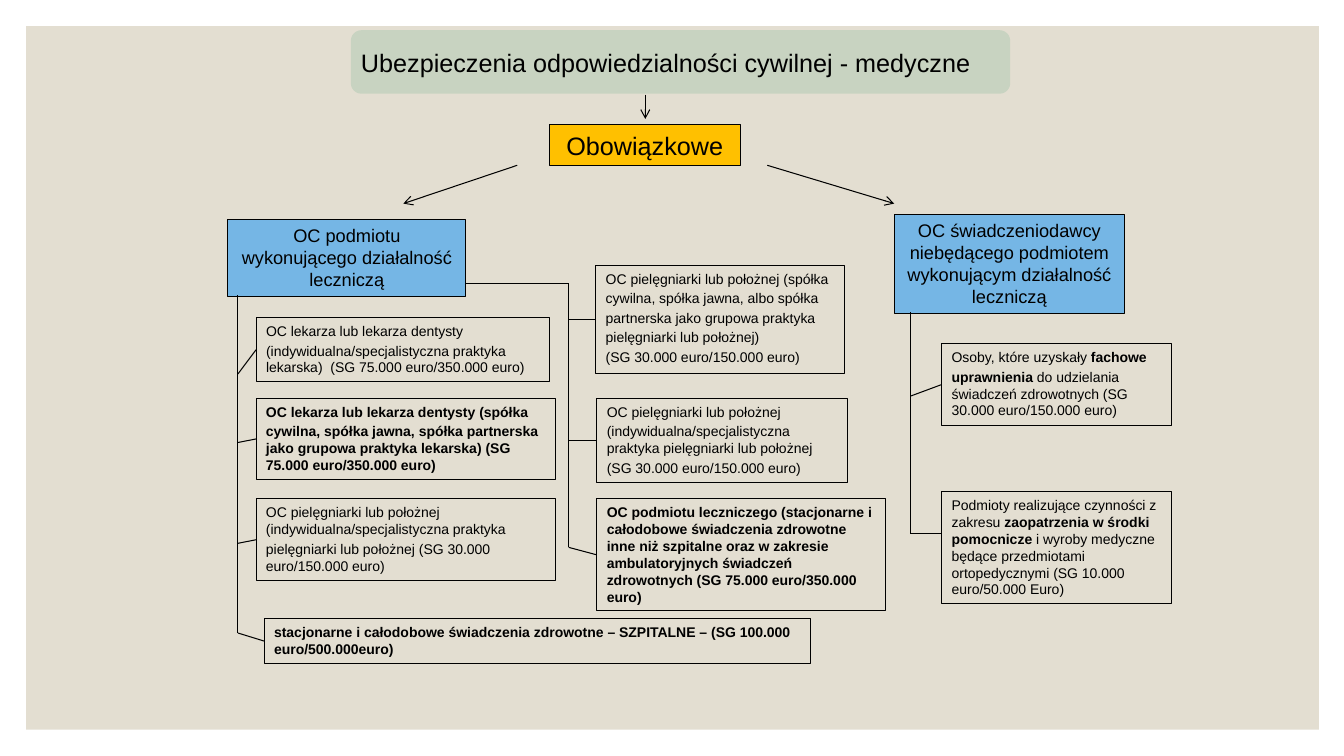
from dataclasses import dataclass

from lxml import etree
from pptx import Presentation
from pptx.dml.color import RGBColor
from pptx.enum.shapes import MSO_CONNECTOR, MSO_SHAPE
from pptx.enum.text import MSO_ANCHOR, MSO_AUTO_SIZE, PP_ALIGN
from pptx.oxml.ns import qn
from pptx.shapes.autoshape import Shape
from pptx.shapes.connector import Connector
from pptx.slide import Slide
from pptx.text.text import TextFrame
from pptx.util import Inches, Pt

RECTANGLE = MSO_SHAPE.RECTANGLE
ROUNDED = MSO_SHAPE.ROUNDED_RECTANGLE
STRAIGHT = MSO_CONNECTOR.STRAIGHT
LEFT, CENTER = PP_ALIGN.LEFT, PP_ALIGN.CENTER
TOP, MIDDLE = MSO_ANCHOR.TOP, MSO_ANCHOR.MIDDLE
NO_AUTOFIT = MSO_AUTO_SIZE.NONE
LEFT_SIDE = 1


@dataclass(frozen=True)
class Theme:
    font: str = "Arial"
    ink: str = "000000"
    panel: str = "E3DED1"
    plaque: str = "339966"
    plaque_alpha: int = 15
    root: str = "FFC000"
    branch: str = "75B6E5"
    title_size: int = 18
    branch_size: int = 13
    leaf_size: int = 10
    line_width: float = 0.75
    space_ratio: float = 0.2


THEME = Theme()


@dataclass(frozen=True)
class Area:
    left: float
    top: float
    width: float
    height: float

    def lengths(self) -> tuple:
        return tuple(Inches(v) for v in (self.left, self.top, self.width, self.height))


@dataclass(frozen=True)
class Header:
    area: Area
    fill: str
    size: int
    text: str


@dataclass(frozen=True)
class Leaf:
    """A box on a trunk; ** switches bold on and off in its paragraphs."""
    area: Area
    trunk_x: float
    joint_y: float
    paragraphs: tuple[str, ...]
    level_joint: bool = False


@dataclass(frozen=True)
class Segment:
    start: tuple[float, float]
    end: tuple[float, float]
    arrow: bool = False


TITLE = "Ubezpieczenia odpowiedzialności cywilnej - medyczne"
PANEL_AREA = Area(0.26, 0.26, 12.82, 6.98)
TITLE_AREA = Area(3.48, 0.3, 6.54, 0.63)

HEADERS = (
    Header(Area(5.45, 1.24, 1.89, 0.4), THEME.root, THEME.title_size, "Obowiązkowe"),
    Header(Area(2.26, 2.18, 2.36, 0.76), THEME.branch, THEME.branch_size,
           "OC podmiotu wykonującego działalność leczniczą"),
    Header(Area(8.87, 2.13, 2.28, 0.98), THEME.branch, THEME.branch_size,
           "OC świadczeniodawcy niebędącego podmiotem wykonującym działalność leczniczą"),
)

TRUNK_LEFT, TRUNK_MIDDLE, TRUNK_RIGHT = 2.36, 5.64, 9.03

LEAVES = (
    Leaf(Area(2.54, 3.15, 2.91, 0.64), TRUNK_LEFT, 3.71, (
        "OC lekarza lub lekarza dentysty",
        "(indywidualna/specjalistyczna praktyka lekarska)  (SG 75.000 euro/350.000 euro)")),
    Leaf(Area(2.54, 3.95, 2.97, 0.81), TRUNK_LEFT, 4.39, (
        "**OC lekarza lub lekarza dentysty (spółka**",
        "**cywilna, spółka jawna, spółka partnerska jako grupowa praktyka lekarska) "
        "(SG 75.000 euro/350.000 euro)**")),
    Leaf(Area(2.54, 4.95, 2.97, 0.81), TRUNK_LEFT, 5.39, (
        "OC pielęgniarki lub położnej (indywidualna/specjalistyczna praktyka",
        "pielęgniarki lub położnej (SG 30.000 euro/150.000 euro)")),
    Leaf(Area(2.62, 6.14, 5.42, 0.44), TRUNK_LEFT, 6.28, (
        "**stacjonarne i całodobowe świadczenia zdrowotne – SZPITALNE – "
        "(SG 100.000 euro/500.000euro)**",)),
    Leaf(Area(5.91, 2.63, 2.47, 1.08), TRUNK_MIDDLE, 3.17, (
        "OC pielęgniarki lub położnej (spółka",
        "cywilna, spółka jawna, albo spółka",
        "partnerska jako grupowa praktyka",
        "pielęgniarki lub położnej)",
        "(SG 30.000 euro/150.000 euro)")),
    Leaf(Area(5.92, 3.95, 2.49, 0.84), TRUNK_MIDDLE, 4.37, (
        "OC pielęgniarki lub położnej",
        "(indywidualna/specjalistyczna praktyka pielęgniarki lub położnej",
        "(SG 30.000 euro/150.000 euro)")),
    Leaf(Area(5.92, 4.95, 2.86, 1.11), TRUNK_MIDDLE, 5.43, (
        "**OC podmiotu leczniczego (stacjonarne i całodobowe świadczenia zdrowotne inne niż "
        "szpitalne oraz w zakresie ambulatoryjnych świadczeń zdrowotnych "
        "(SG 75.000 euro/350.000 euro)**",)),
    Leaf(Area(9.34, 3.41, 2.28, 0.81), TRUNK_RIGHT, 3.93, (
        "Osoby, które uzyskały **fachowe**",
        "**uprawnienia **do udzielania świadczeń zdrowotnych (SG 30.000 euro/150.000 euro)")),
    Leaf(Area(9.34, 4.88, 2.28, 1.11), TRUNK_RIGHT, 5.29, (
        "Podmioty realizujące czynności z zakresu **zaopatrzenia w środki pomocnicze **"
        "i wyroby medyczne będące przedmiotami ortopedycznymi "
        "(SG 10.000 euro/50.000 Euro)",), level_joint=True),
)

SEGMENTS = (
    Segment((6.4, 0.94), (6.4, 1.18), arrow=True),
    Segment((5.13, 1.64), (4, 2.02), arrow=True),
    Segment((7.61, 1.64), (8.87, 2.02), arrow=True),
    Segment((TRUNK_LEFT, 2.93), (TRUNK_LEFT, 6.28)),
    Segment((4.62, 2.81), (TRUNK_MIDDLE, 2.81)),
    Segment((TRUNK_MIDDLE, 2.81), (TRUNK_MIDDLE, 5.43)),
    Segment((TRUNK_RIGHT, 3.1), (TRUNK_RIGHT, 5.29)),
)


def write_text(frame: TextFrame, paragraphs: tuple[str, ...], size: int,
               align: PP_ALIGN, anchor: MSO_ANCHOR) -> None:
    frame.word_wrap = True
    frame.auto_size = NO_AUTOFIT
    frame.vertical_anchor = anchor
    for index, text in enumerate(paragraphs):
        para = frame.paragraphs[0] if index == 0 else frame.add_paragraph()
        para.alignment = align
        para.space_before = Pt(size * THEME.space_ratio)
        para.font.name = THEME.font
        para.font.size = Pt(size)
        para.font.color.rgb = RGBColor.from_string(THEME.ink)
        spans = [(part, place % 2 == 1) for place, part in enumerate(text.split("**")) if part]
        for part, bold in spans:
            span = para.add_run()
            span.text = part
            if len(spans) > 1:
                span.font.bold = bold
        if len(spans) == 1:
            para.font.bold = spans[0][1]


def add_box(slide: Slide, area: Area, fill: str | None = None, outlined: bool = True,
            kind: MSO_SHAPE = RECTANGLE) -> Shape:
    box = slide.shapes.add_shape(kind, *area.lengths())
    box.shadow.inherit = False
    if fill:
        box.fill.solid()
        box.fill.fore_color.rgb = RGBColor.from_string(fill)
    else:
        box.fill.background()
    if outlined:
        box.line.color.rgb = RGBColor.from_string(THEME.ink)
        box.line.width = Pt(THEME.line_width)
    else:
        box.line.fill.background()
    return box


def add_segment(slide: Slide, segment: Segment) -> Connector:
    ends = (Inches(v) for v in segment.start + segment.end)
    connector = slide.shapes.add_connector(STRAIGHT, *ends)
    connector.line.color.rgb = RGBColor.from_string(THEME.ink)
    connector.line.width = Pt(THEME.line_width)
    if segment.arrow:
        etree.SubElement(connector.line._get_or_add_ln(), qn("a:tailEnd"), type="arrow")
    etree.SubElement(connector._element.spPr, qn("a:effectLst"))
    return connector


def add_title(slide: Slide) -> None:
    plaque = add_box(slide, TITLE_AREA, THEME.plaque, outlined=False, kind=ROUNDED)
    color = plaque._element.spPr.find(".//" + qn("a:srgbClr"))
    etree.SubElement(color, qn("a:alpha"), val=str(THEME.plaque_alpha * 1000))
    title = slide.shapes.title
    title.left, title.top, title.width, title.height = TITLE_AREA.lengths()
    write_text(title.text_frame, (TITLE,), THEME.title_size, LEFT, MIDDLE)
    # Bring the title in front of its plaque
    plaque._element.addnext(title._element)


def add_leaf(slide: Slide, leaf: Leaf) -> None:
    box = add_box(slide, leaf.area)
    write_text(box.text_frame, leaf.paragraphs, THEME.leaf_size, LEFT, TOP)
    joint = Segment((leaf.trunk_x, leaf.joint_y), (leaf.area.left, leaf.joint_y))
    connector = add_segment(slide, joint)
    if not leaf.level_joint:
        connector.end_connect(box, LEFT_SIDE)


def main() -> None:
    deck = Presentation()
    deck.slide_width, deck.slide_height = Inches(13.33), Inches(7.5)
    page = deck.slides.add_slide(deck.slide_layouts[5])

    # Background panel and title
    add_box(page, PANEL_AREA, THEME.panel, outlined=False)
    add_title(page)

    # Header boxes
    for header in HEADERS:
        box = add_box(page, header.area, header.fill)
        write_text(box.text_frame, (header.text,), header.size, CENTER, TOP)

    # Arrows and trunks, then the leaves joined to them
    for segment in SEGMENTS:
        add_segment(page, segment)
    for leaf in LEAVES:
        add_leaf(page, leaf)

    deck.save("out.pptx")


if __name__ == "__main__":
    main()
